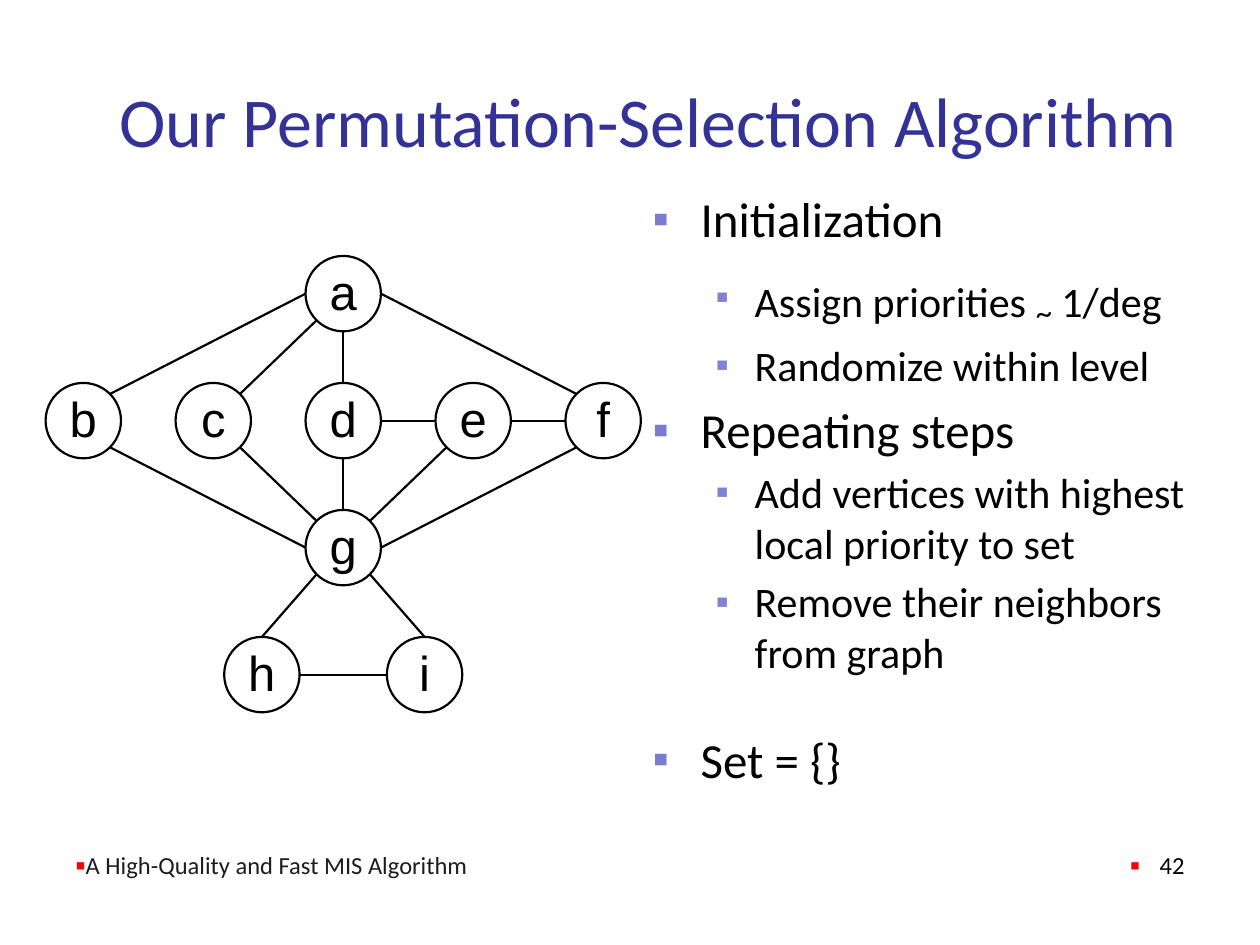
"""Build the permutation-selection algorithm slide with its example graph."""
from dataclasses import dataclass
from math import cos, radians, sin

from lxml import etree
from pptx import Presentation
from pptx.dml.color import RGBColor
from pptx.enum.shapes import MSO_CONNECTOR, MSO_SHAPE
from pptx.enum.text import MSO_ANCHOR, MSO_AUTO_SIZE, PP_ALIGN
from pptx.oxml.ns import qn
from pptx.util import Cm, Pt

OVAL, STRAIGHT = MSO_SHAPE.OVAL, MSO_CONNECTOR.STRAIGHT
MIDDLE, BOTTOM = MSO_ANCHOR.MIDDLE, MSO_ANCHOR.BOTTOM
LEFT, CENTER, RIGHT = PP_ALIGN.LEFT, PP_ALIGN.CENTER, PP_ALIGN.RIGHT
NO_AUTOFIT = MSO_AUTO_SIZE.NONE


@dataclass
class Theme:
    text_font: str = "Calibri"
    node_font: str = "Arial"
    title: str = "333397"
    ink: str = "000000"
    footer: str = "1C1C1C"
    footer_bullet: str = "FF0000"
    bullets: tuple = ("7B7BD1", "8282D4")
    bullet_sizes: tuple = (95, 90)
    body_sizes: tuple = (28, 24)
    title_size: int = 40
    symbol_size: int = 32
    node_size: int = 28
    footer_size: int = 14
    line_width: float = 1.25


theme = Theme()


def style(paragraph, font, size, color, align=LEFT):
    paragraph.alignment = align
    for span in paragraph.runs:
        span.font.name = font
        span.font.size = Pt(size)
        span.font.color.rgb = RGBColor.from_string(color)


def add_bullet(paragraph, color, percent, margin, hanging):
    properties = paragraph._p.get_or_add_pPr()
    properties.set("marL", str(Cm(margin)))
    properties.set("indent", str(-Cm(hanging)))
    bullet_color = etree.SubElement(properties, qn("a:buClr"))
    etree.SubElement(bullet_color, qn("a:srgbClr"), val=color)
    etree.SubElement(properties, qn("a:buSzPct"), val=str(percent * 1000))
    etree.SubElement(properties, qn("a:buFont"), typeface=theme.node_font)
    etree.SubElement(properties, qn("a:buChar"), char="▪")


deck = Presentation()
deck.slide_width, deck.slide_height = Cm(25.4), Cm(19.05)
page = deck.slides.add_slide(deck.slide_layouts[1])

radius = 0.76
column, row = 2.62, 2.56
left, top = 1.68, 5.92
middle = left + 2 * column
nodes = {name: (left + i * column, top + row) for i, name in enumerate("bcdef")}
nodes["a"] = (middle, top)
nodes["g"] = (middle, top + 2 * row)
nodes["h"] = (middle - 1.64, top + 3 * row)
nodes["i"] = (middle + 1.64, top + 3 * row)

angles = {"E": 0, "SE": 45, "S": 90, "SW": 135, "W": 180, "NW": 225, "N": 270, "NE": 315}
edges = [
    ("a", "W", "b", "NE"), ("a", "SW", "c", "NE"), ("a", "S", "d", "N"),
    ("a", "E", "f", "NW"), ("d", "E", "e", "W"), ("e", "E", "f", "W"),
    ("b", "SE", "g", "W"), ("c", "SE", "g", "NW"), ("d", "S", "g", "N"),
    ("e", "SW", "g", "NE"), ("f", "SW", "g", "E"), ("g", "SW", "h", "N"),
    ("g", "SE", "i", "N"), ("h", "E", "i", "W"),
]
for start, start_side, end, end_side in edges:
    points = []
    for name, side in ((start, start_side), (end, end_side)):
        x, y = nodes[name]
        angle = radians(angles[side])
        points += [Cm(x + radius * cos(angle)), Cm(y + radius * sin(angle))]
    edge = page.shapes.add_connector(STRAIGHT, *points)
    edge.line.color.rgb = RGBColor.from_string(theme.ink)
    edge.line.width = Pt(theme.line_width)
    etree.SubElement(edge._element.spPr, qn("a:effectLst"))

for name, (x, y) in nodes.items():
    node = page.shapes.add_shape(
        OVAL, Cm(x - radius), Cm(y - radius), Cm(2 * radius), Cm(2 * radius))
    node.shadow.inherit = False
    node.fill.background()
    node.line.color.rgb = RGBColor.from_string(theme.ink)
    node.line.width = Pt(theme.line_width)
    frame = node.text_frame
    frame.margin_left = frame.margin_right = frame.margin_top = frame.margin_bottom = 0
    frame.vertical_anchor = BOTTOM
    frame.text = name
    style(frame.paragraphs[0], theme.node_font, theme.node_size, theme.ink, CENTER)

title = page.shapes.title
title.left, title.top, title.width, title.height = Cm(1.27), Cm(1.52), Cm(22.86), Cm(1.78)
frame = title.text_frame
frame.text = "Our Permutation-Selection Algorithm"
frame.auto_size = NO_AUTOFIT
frame.vertical_anchor = MIDDLE
frame.margin_left = Cm(1.14)
style(frame.paragraphs[0], theme.text_font, theme.title_size, theme.title)

body = page.placeholders[1]
body.left, body.top, body.width, body.height = Cm(12.9), Cm(3.68), Cm(11.43), Cm(12.45)
frame = body.text_frame
frame.auto_size = NO_AUTOFIT
items = [
    (0, 0, ["Initialization"]),
    (1, 8, ["Assign priorities ", "~", " 1/deg"]),
    (1, 4.8, ["Randomize within level"]),
    (0, 5.6, ["Repeating steps"]),
    (1, 4.8, ["Add vertices with highest local priority to set"]),
    (1, 4.8, ["Remove their neighbors from graph"]),
    (0, 30, ["Set = {}"]),
]
for index, (level, space, texts) in enumerate(items):
    paragraph = frame.add_paragraph() if index else frame.paragraphs[0]
    paragraph.level = level
    paragraph.space_before = Pt(space)
    margin, hanging = ((0.97, 0.97), (2.06, 0.79))[level]
    add_bullet(paragraph, theme.bullets[level], theme.bullet_sizes[level], margin, hanging)
    for text in texts:
        paragraph.add_run().text = text
    style(paragraph, theme.text_font, theme.body_sizes[level], theme.ink)
    for span in paragraph.runs:
        if span.text == "~":
            span.font.size = Pt(theme.symbol_size)
            span.font._element.set("baseline", "-12000")

footers = [
    ("A High-Quality and Fast MIS Algorithm", 1.27, 17.58, theme.footer, LEFT, 0),
    ("42", 18.85, 5.28, theme.ink, RIGHT, 0.6),
]
for text, x, width, color, align, hanging in footers:
    box = page.shapes.add_textbox(Cm(x), Cm(16.59), Cm(width), Cm(1.27))
    frame = box.text_frame
    frame.word_wrap = True
    frame.vertical_anchor = BOTTOM
    frame.text = text
    paragraph = frame.paragraphs[0]
    add_bullet(paragraph, theme.footer_bullet, 120, hanging, hanging)
    style(paragraph, theme.text_font, theme.footer_size, color, align)

deck.save("out.pptx")
